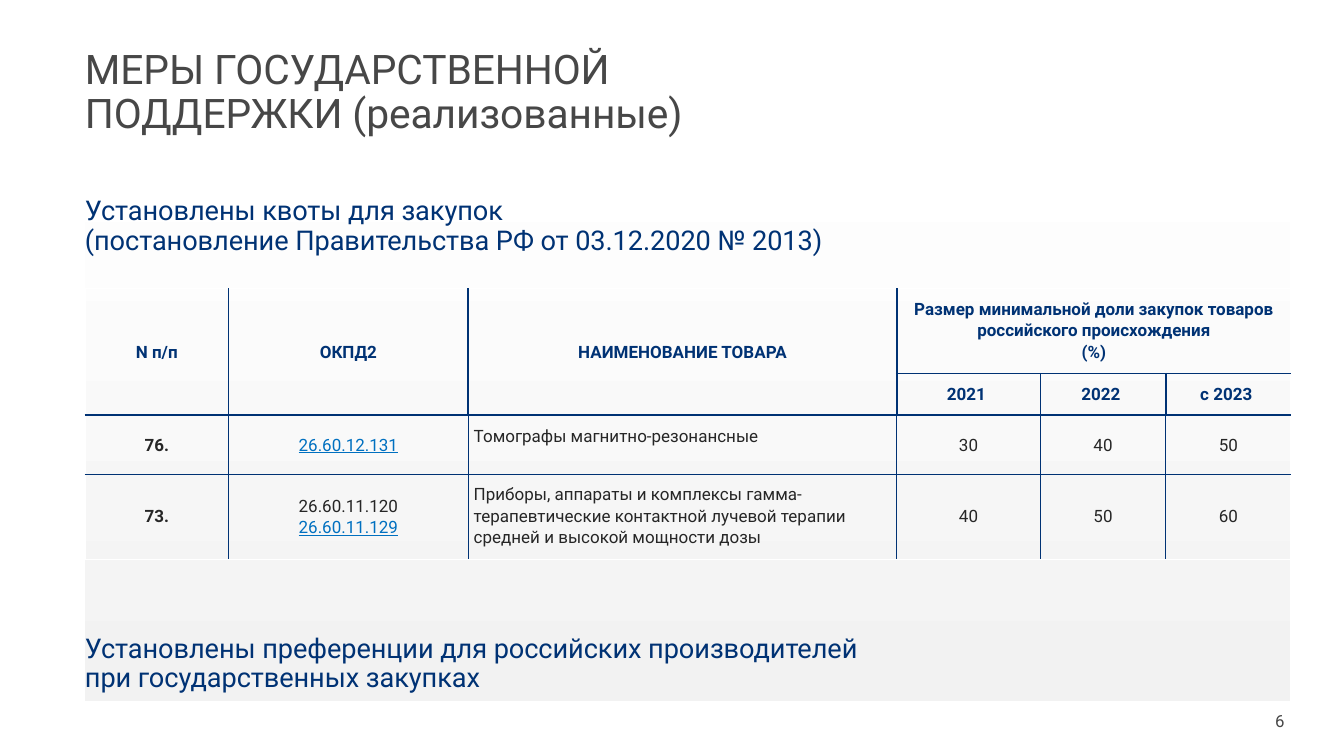
from lxml import etree
from pptx import Presentation
from pptx.dml.color import RGBColor
from pptx.enum.shapes import MSO_SHAPE
from pptx.enum.text import MSO_ANCHOR, PP_ALIGN
from pptx.oxml.ns import qn
from pptx.util import Cm, Pt

RECTANGLE = MSO_SHAPE.RECTANGLE
TOP, MIDDLE = MSO_ANCHOR.TOP, MSO_ANCHOR.MIDDLE
LEFT, CENTER, RIGHT = PP_ALIGN.LEFT, PP_ALIGN.CENTER, PP_ALIGN.RIGHT

NAVY, WHITE, GREY = "003274", "FFFFFF", "474747"
INK, LINK = "262626", "0070C0"
MARGIN = 3.53
HEADER_ROWS = 2
NAME_COLUMN = 2

COLUMN_WIDTHS = [5.97, 9.96, 17.81, 5.97, 5.21, 5.21]
ROW_HEIGHTS = [3.15, 1.55, 2.44, 3.33]
QUOTAS = [
    ["N п/п", "ОКПД2", "НАИМЕНОВАНИЕ ТОВАРА",
     "Размер минимальной доли закупок товаров российского происхождения\n(%)", "", ""],
    ["", "", "", "2021 ", "2022 ", "с 2023 "],
    ["76.", "26.60.12.131", "Томографы магнитно-резонансные", "30", "40", "50"],
    ["73.", "26.60.11.120\n26.60.11.129",
     "Приборы, аппараты и комплексы гамма-терапевтические контактной "
     "лучевой терапии средней и высокой мощности дозы", "40", "50", "60"],
]
LINKED_CODES = {"26.60.12.131", "26.60.11.129"}


def rgb(value):
    return RGBColor.from_string(value)


class SlideBuilder:
    font_name = "Roboto"

    def __init__(self, slide):
        self.slide = slide

    def style(self, paragraph, size, color, bold=False, underline=False):
        font = paragraph.font
        font.name, font.size = self.font_name, Pt(size)
        font.bold, font.underline = bold, underline
        font.color.rgb = rgb(color)
        return font

    def panel(self, left, top, width, height, start, end):
        panel = self.slide.shapes.add_shape(
            RECTANGLE, Cm(left), Cm(top), Cm(width), Cm(height))
        panel.shadow.inherit = False
        panel.line.fill.background()
        panel.fill.gradient()
        panel.fill.gradient_angle = 270
        for stop, position, color in zip(panel.fill.gradient_stops, (0, 1), (start, end)):
            stop.position = position
            stop.color.rgb = rgb(color)

    def text_box(self, left, top, width, height):
        box = self.slide.shapes.add_textbox(Cm(left), Cm(top), Cm(width), Cm(height))
        box.text_frame.word_wrap = True
        return box.text_frame

    def heading(self, text, top, height, size, color):
        frame = self.text_box(MARGIN, top, 48.5, height)
        frame.margin_left = frame.margin_top = 0
        paragraph = frame.paragraphs[0]
        paragraph.text = text
        paragraph.line_spacing = 0.9
        font = self.style(paragraph, size, color)
        font._rPr.set("spc", "-10")

    def page_number(self, text, left, top, width, height):
        frame = self.text_box(left, top, width, height)
        frame.vertical_anchor = MIDDLE
        paragraph = frame.paragraphs[0]
        paragraph.text = text
        paragraph.alignment = RIGHT
        self.style(paragraph, 19.8, GREY)

    def border(self, cell, side, color, width):
        line = etree.SubElement(cell._tc.get_or_add_tcPr(), qn(f"a:ln{side}"),
                                w=str(Pt(width)))
        fill = etree.SubElement(line, qn("a:solidFill"))
        etree.SubElement(fill, qn("a:srgbClr"), val=color)

    def cell_borders(self, cell, row, column):
        last_column = column + (cell.span_width if cell.is_merge_origin else 1)
        inner = 2.25 if row < HEADER_ROWS else 1
        at_edge = {
            "L": column == 0,
            "R": last_column == len(COLUMN_WIDTHS),
            "T": row == 0,
            "B": row == len(ROW_HEIGHTS) - 1,
        }
        for side, outer in at_edge.items():
            width = 2.25 if side == "T" and row == HEADER_ROWS else inner
            self.border(cell, side, WHITE if outer else NAVY, 1 if outer else width)

    def cell_text(self, cell, text, row, column):
        header = row < HEADER_ROWS
        is_name = column == NAME_COLUMN and not header
        cell.text = text
        for paragraph in cell.text_frame.paragraphs:
            linked = paragraph.text in LINKED_CODES
            paragraph.alignment = LEFT if is_name else CENTER
            paragraph.line_spacing = 1.07
            self.style(paragraph, 20, NAVY if header else LINK if linked else INK,
                       bold=header or column == 0, underline=linked)
        top_aligned = is_name or (header and column > NAME_COLUMN)
        cell.vertical_anchor = TOP if top_aligned else MIDDLE

    def table(self, left, top, rows):
        table = self.slide.shapes.add_table(
            len(rows), len(COLUMN_WIDTHS), Cm(left), Cm(top),
            Cm(sum(COLUMN_WIDTHS)), Cm(sum(ROW_HEIGHTS))).table
        table.first_row = table.horz_banding = False
        for column, width in zip(table.columns, COLUMN_WIDTHS):
            column.width = Cm(width)
        for row, height in zip(table.rows, ROW_HEIGHTS):
            row.height = Cm(height)

        # Header spans
        for column in range(NAME_COLUMN + 1):
            table.cell(0, column).merge(table.cell(1, column))
        table.cell(0, NAME_COLUMN + 1).merge(table.cell(0, len(COLUMN_WIDTHS) - 1))

        for row, texts in enumerate(rows):
            for column, text in enumerate(texts):
                cell = table.cell(row, column)
                cell.margin_left = cell.margin_right = Cm(0.23)
                cell.margin_top = cell.margin_bottom = Cm(0.41)
                self.cell_borders(cell, row, column)
                cell.fill.background()
                if not cell.is_spanned:
                    self.cell_text(cell, text, row, column)


def main():
    presentation = Presentation()
    presentation.slide_width, presentation.slide_height = Cm(55.86), Cm(31.42)
    builder = SlideBuilder(presentation.slides.add_slide(presentation.slide_layouts[6]))

    # Background panel
    builder.panel(MARGIN, 5.89, 50.09, 23.24, WHITE, "F2F2F2")

    # Headings
    builder.heading("МЕРЫ ГОСУДАРСТВЕННОЙ\nПОДДЕРЖКИ (реализованные)", 2.06, 5.28, 48, GREY)
    builder.heading("Установлены квоты для закупок\n"
                    "(постановление Правительства РФ от 03.12.2020 № 2013)",
                    8.2, 3.6, 32, NAVY)
    builder.heading("Установлены преференции для российских производителей\n"
                    "при государственных закупках", 26.39, 3.6, 32, NAVY)

    # Quota table
    builder.table(MARGIN, 11.99, QUOTAS)

    # Page number
    builder.page_number("6", 41.07, 29.11, 12.57, 1.68)

    presentation.save("out.pptx")


if __name__ == "__main__":
    main()
